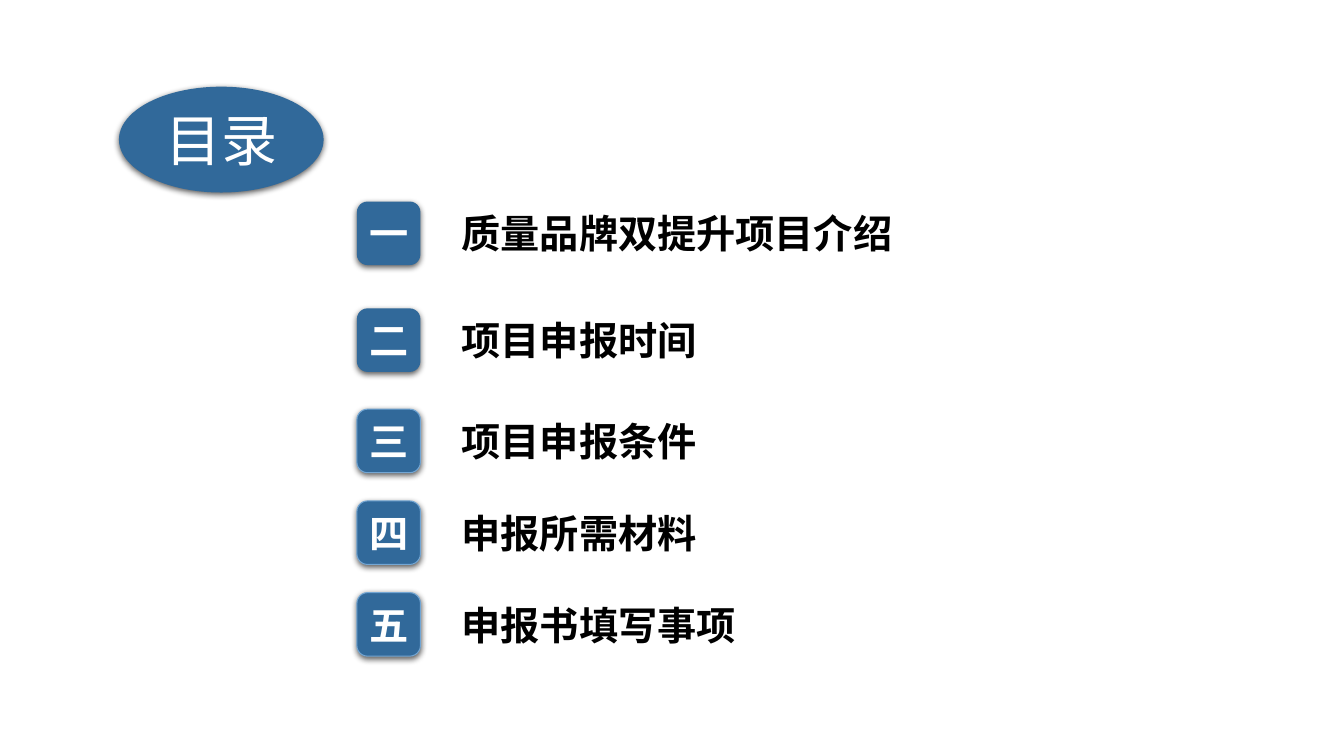
from lxml import etree
from pptx import Presentation
from pptx.dml.color import RGBColor
from pptx.enum.shapes import MSO_SHAPE
from pptx.enum.text import MSO_ANCHOR, MSO_AUTO_SIZE, PP_ALIGN
from pptx.oxml.ns import qn
from pptx.util import Inches, Pt

BLUE = RGBColor(0x31, 0x69, 0x9A)
LIGHT_BLUE = RGBColor(0x73, 0xA6, 0xD3)
WHITE = RGBColor(0xFF, 0xFF, 0xFF)
BLACK = RGBColor(0x00, 0x00, 0x00)
CJK_FONT = "Noto Sans CJK SC"
MIDDLE = MSO_ANCHOR.MIDDLE
CENTER, LEFT = PP_ALIGN.CENTER, PP_ALIGN.LEFT


def fill_with_shadow(shape, outline):
    """Blue fill, optional outline and a soft shadow straight below."""
    shape.fill.solid()
    shape.fill.fore_color.rgb = BLUE
    if outline:
        shape.line.color.rgb = LIGHT_BLUE
        shape.line.width = Pt(0.75)
    else:
        shape.line.fill.background()
    shape.shadow.inherit = False
    effects = shape._element.spPr.find(qn("a:effectLst"))
    shadow = etree.SubElement(effects, qn("a:outerShdw"), blurRad=str(Pt(4.5)),
                              dist=str(Pt(1.5)), dir="5400000", algn="ctr", rotWithShape="0")
    color = etree.SubElement(shadow, qn("a:srgbClr"), val="000000")
    etree.SubElement(color, qn("a:alpha"), val="63000")


def write(shape, text, font, size, color, bold, align):
    """One vertically centred paragraph."""
    frame = shape.text_frame
    frame.word_wrap = True
    frame.auto_size = MSO_AUTO_SIZE.NONE
    frame.vertical_anchor = MIDDLE
    para = frame.paragraphs[0]
    para.alignment = align
    span = para.add_run()
    span.text = text
    span.font.size = Pt(size)
    span.font.bold = bold
    span.font.color.rgb = color
    span.font.name = font
    etree.SubElement(span.font._element, qn("a:ea"), typeface=CJK_FONT)


deck = Presentation()
deck.slide_width, deck.slide_height = Inches(13.33), Inches(7.5)
page = deck.slides.add_slide(deck.slide_layouts[5])

# Title on an ellipse
title_area = Inches(1.18), Inches(0.86), Inches(2.03), Inches(1.05)
ellipse = page.shapes.add_shape(MSO_SHAPE.OVAL, *title_area)
fill_with_shadow(ellipse, outline=False)
title = page.shapes.title
title.left, title.top, title.width, title.height = title_area
write(title, "目录", CJK_FONT, 40, WHITE, False, CENTER)
# The title text lies in front of the ellipse
ellipse._element.addnext(title._element)

# Contents: number, heading, badge top, heading width, outlined badge
BADGE = 0.63
entries = [
    ("一", "质量品牌双提升项目介绍", 2.0, 5.68, False),
    ("二", "项目申报时间", 3.06, 7.12, False),
    ("三", "项目申报条件", 4.06, 5.39, True),
    ("四", "申报所需材料", 4.97, 5.39, True),
    ("五", "申报书填写事项", 5.88, 5.39, True),
]
for number, heading, top, width, outline in entries:
    row = page.shapes.add_group_shape()
    box = row.shapes.add_textbox(Inches(4.48), Inches(top + 0.03), Inches(width), Inches(0.57))
    write(box, heading, "Arial", 28, BLACK, True, LEFT)
    badge = row.shapes.add_shape(MSO_SHAPE.ROUNDED_RECTANGLE, Inches(3.54), Inches(top),
                                 Inches(BADGE), Inches(BADGE))
    fill_with_shadow(badge, outline)
    write(badge, number, CJK_FONT, 28, WHITE, True, CENTER)

deck.save("out.pptx")
